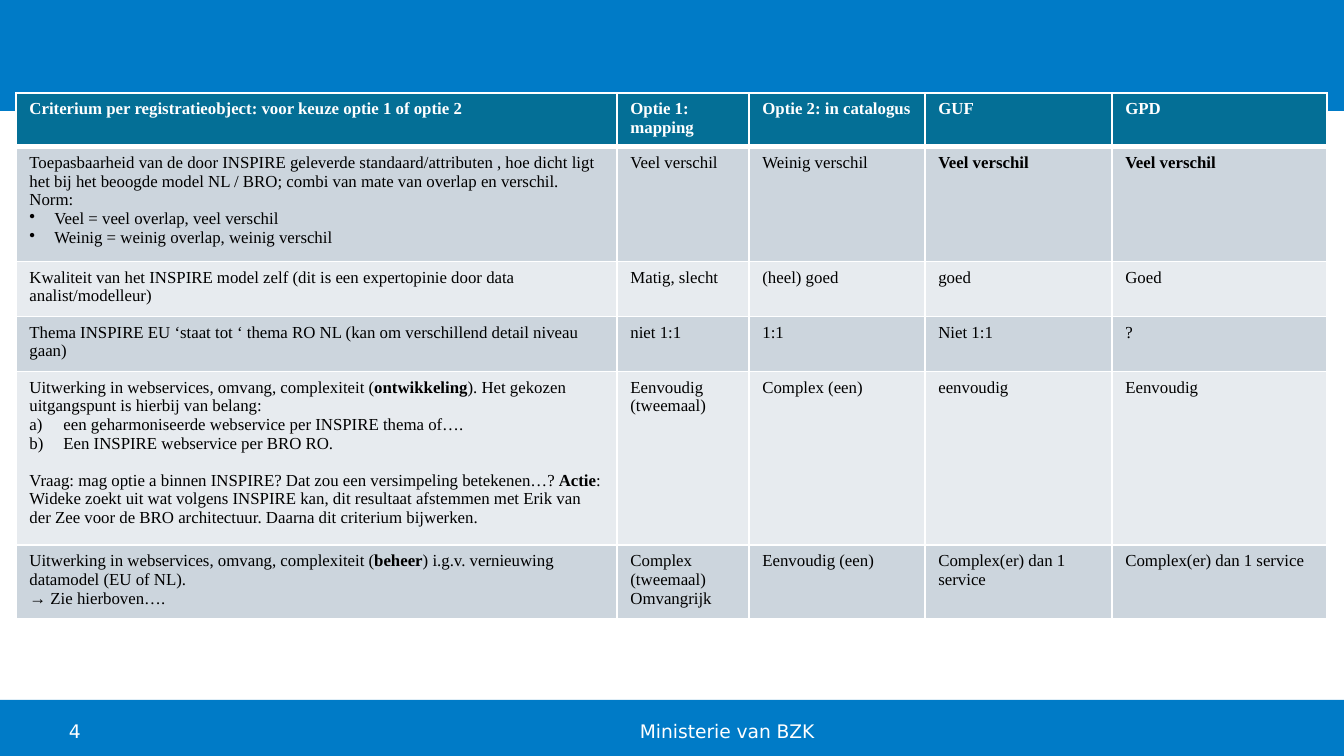
from dataclasses import dataclass

from lxml import etree
from pptx import Presentation
from pptx.dml.color import RGBColor
from pptx.enum.shapes import MSO_SHAPE
from pptx.enum.text import MSO_ANCHOR
from pptx.oxml.ns import qn
from pptx.util import Pt

RECTANGLE = MSO_SHAPE.RECTANGLE
BOTTOM = MSO_ANCHOR.BOTTOM

EMU_PER_PX = 914400 / 134.4
SLIDE_WIDTH, SLIDE_HEIGHT = 1344, 756


@dataclass(frozen=True)
class Theme:
    blue: str = "007BC7"
    header: str = "046F96"
    bands: tuple = ("CCD5DD", "E7EBEF")
    white: str = "FFFFFF"
    black: str = "000000"
    table_font: str = "Times New Roman"
    footer_font: str = "DejaVu Sans"
    table_size: int = 9
    footer_size: int = 10
    paragraph_gap: int = 10
    border: int = 1
    header_border: int = 3


THEME = Theme()


@dataclass(frozen=True)
class Line:
    """A paragraph; ** switches bold on and off."""
    text: str
    marker: str = ""
    space_before: int = 0


# Marker: element name, its attributes, hanging indent in px
MARKERS = {
    "bullet": ("a:buChar", {"char": "•"}, 25),
    "letter": ("a:buAutoNum", {"type": "alphaLcParenR"}, 34),
}

TABLE_LEFT, TABLE_TOP = 16, 93
COLUMN_WIDTHS = (601, 132, 176, 187, 215)
ROW_HEIGHTS = (49, 107, 55, 55, 163, 69)

HEADER = ("Criterium per registratieobject: voor keuze optie 1 of optie 2",
          "Optie 1: mapping", "Optie 2: in catalogus", "GUF", "GPD")

CRITERIA = (
    ((Line("Toepasbaarheid van de door INSPIRE geleverde standaard/attributen , hoe dicht ligt "
           "het bij het beoogde model NL / BRO; combi van mate van overlap en verschil. Norm:"),
      Line("Veel = veel overlap, veel verschil", "bullet"),
      Line("Weinig = weinig overlap, weinig verschil", "bullet")),
     "Veel verschil", "Weinig verschil", "**Veel verschil**", "**Veel verschil**"),
    ("Kwaliteit van het INSPIRE model zelf (dit is een expertopinie door data analist/modelleur)",
     "Matig, slecht", "(heel) goed", "goed", "Goed"),
    ("Thema INSPIRE EU ‘staat tot ‘ thema RO NL (kan om verschillend detail niveau gaan)",
     "niet 1:1", "1:1", "Niet 1:1", "?"),
    ((Line("Uitwerking in webservices, omvang, complexiteit (**ontwikkeling**). "
           "Het gekozen uitgangspunt is hierbij van belang:"),
      Line("een geharmoniseerde webservice per INSPIRE thema of….", "letter"),
      Line("Een INSPIRE webservice per BRO RO.", "letter"),
      Line("Vraag: mag optie a binnen INSPIRE? Dat zou een versimpeling betekenen…? **Actie**: "
           "Wideke zoekt uit wat volgens INSPIRE kan, dit resultaat afstemmen met Erik van der Zee "
           "voor de BRO architectuur. Daarna dit criterium bijwerken.",
           space_before=THEME.paragraph_gap)),
     "Eenvoudig (tweemaal)", "Complex (een)", "eenvoudig", "Eenvoudig"),
    ((Line("Uitwerking in webservices, omvang, complexiteit (**beheer**) i.g.v. vernieuwing "
           "datamodel (EU of NL)."),
      Line("→ Zie hierboven….")),
     (Line("Complex (tweemaal)"), Line("Omvangrijk")),
     "Eenvoudig (een)", "Complex(er) dan 1 service", "Complex(er) dan 1 service"),
)


def px(length):
    return round(length * EMU_PER_PX)


def fill_solid(target, color):
    target.fill.solid()
    target.fill.fore_color.rgb = RGBColor.from_string(color)


def add_run(paragraph, text, color, **font_values):
    run = paragraph.add_run()
    run.text = text
    run.font.color.rgb = RGBColor.from_string(color)
    for name, value in font_values.items():
        setattr(run.font, name, value)


def add_band(slide, top, height):
    band = slide.shapes.add_shape(RECTANGLE, 0, px(top), px(SLIDE_WIDTH), px(height))
    band.shadow.inherit = False
    band.line.fill.background()
    fill_solid(band, THEME.blue)


def add_footer_text(slide, text, left, top, width, height):
    box = slide.shapes.add_textbox(*map(px, (left, top, width, height)))
    frame_values = {"word_wrap": True, "vertical_anchor": BOTTOM, "margin_left": 0,
                    "margin_top": 0, "margin_right": 0, "margin_bottom": 0}
    for name, value in frame_values.items():
        setattr(box.text_frame, name, value)
    add_run(box.text_frame.paragraphs[0], text, THEME.white,
            name=THEME.footer_font, size=Pt(THEME.footer_size))


def add_marker(paragraph, marker):
    tag, attributes, indent = MARKERS[marker]
    properties = paragraph._p.get_or_add_pPr()
    properties.set("marL", str(px(indent)))
    properties.set("indent", str(-px(indent)))
    etree.SubElement(properties, qn(tag), attributes)


def set_borders(cell, bottom_width):
    properties = cell._tc.get_or_add_tcPr()
    widths = {"L": THEME.border, "R": THEME.border, "T": THEME.border, "B": bottom_width}
    for side, width in widths.items():
        border = etree.SubElement(properties, qn(f"a:ln{side}"), {"w": str(Pt(width))})
        fill = etree.SubElement(border, qn("a:solidFill"))
        etree.SubElement(fill, qn("a:srgbClr"), {"val": THEME.white})


def write_cell(cell, content, color, bold):
    lines = (Line(content),) if isinstance(content, str) else content
    frame = cell.text_frame
    for index, line in enumerate(lines):
        paragraph = frame.add_paragraph() if index else frame.paragraphs[0]
        if line.marker:
            add_marker(paragraph, line.marker)
        if line.space_before:
            paragraph.space_before = Pt(line.space_before)
        for part_index, part in enumerate(line.text.split("**")):
            if part:
                add_run(paragraph, part, color, name=THEME.table_font,
                        size=Pt(THEME.table_size), bold=bold or part_index % 2 == 1)


def add_criteria_table(slide):
    rows = (HEADER, *CRITERIA)
    table = slide.shapes.add_table(
        len(rows), len(HEADER), px(TABLE_LEFT), px(TABLE_TOP),
        px(sum(COLUMN_WIDTHS)), px(sum(ROW_HEIGHTS))).table
    for column, width in zip(table.columns, COLUMN_WIDTHS):
        column.width = px(width)
    for row_index, (row, height, contents) in enumerate(zip(table.rows, ROW_HEIGHTS, rows)):
        row.height = px(height)
        is_header = row_index == 0
        fill = THEME.header if is_header else THEME.bands[(row_index - 1) % 2]
        color = THEME.white if is_header else THEME.black
        for cell, content in zip(row.cells, contents):
            set_borders(cell, THEME.header_border if is_header else THEME.border)
            fill_solid(cell, fill)
            write_cell(cell, content, color, is_header)


def main():
    presentation = Presentation()
    presentation.slide_width = px(SLIDE_WIDTH)
    presentation.slide_height = px(SLIDE_HEIGHT)
    slide = presentation.slides.add_slide(presentation.slide_layouts[6])
    add_band(slide, 0, 111)
    add_band(slide, 700, 56)
    add_footer_text(slide, "4", 69, 716, 280, 26)
    add_footer_text(slide, "Ministerie van BZK", 640, 719, 456, 23)
    add_criteria_table(slide)
    presentation.save("out.pptx")


if __name__ == "__main__":
    main()
